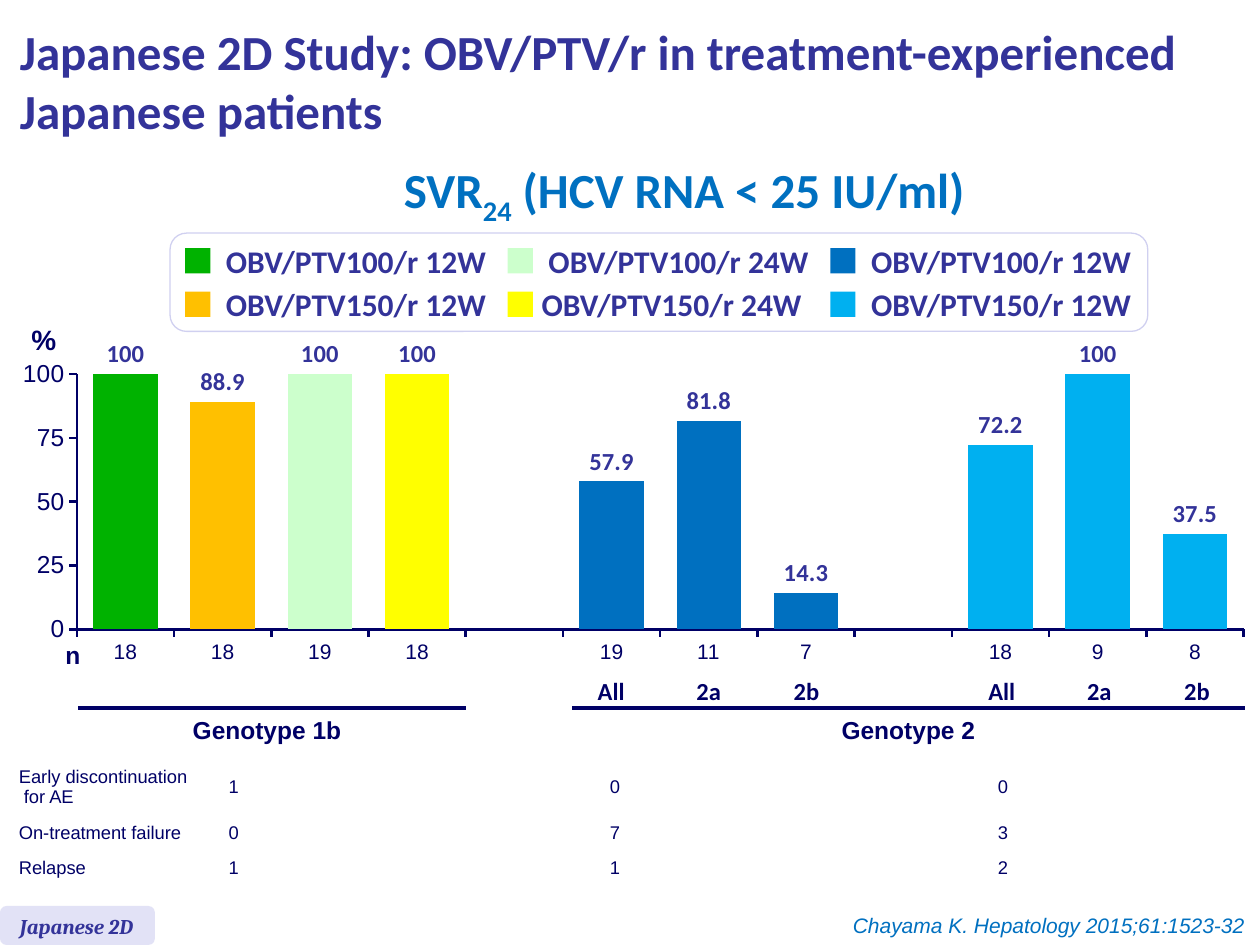
from dataclasses import dataclass
from lxml.etree import SubElement
from pptx import Presentation
from pptx.chart.data import CategoryChartData
from pptx.dml.color import RGBColor
from pptx.enum.chart import XL_CHART_TYPE as ChartType, XL_LABEL_POSITION as LabelPosition
from pptx.enum.chart import XL_TICK_MARK as TickMark
from pptx.enum.shapes import MSO_CONNECTOR as Connector, MSO_SHAPE as Preset
from pptx.enum.text import MSO_ANCHOR as Anchor, PP_ALIGN as Align
from pptx.oxml import parse_xml
from pptx.oxml.ns import nsdecls, qn
from pptx.slide import Slide
from pptx.util import Inches, Pt

WHITE = RGBColor(0xFF, 0xFF, 0xFF)
NAVY = RGBColor(0x00, 0x00, 0x66)
INDIGO = RGBColor(0x33, 0x33, 0x99)
LAVENDER = RGBColor(0xE2, 0xE2, 0xF6)
PALE_VIOLET = RGBColor(0xD0, 0xD0, 0xF0)
GREEN = RGBColor(0x00, 0xB2, 0x00)
MINT = RGBColor(0xCC, 0xFF, 0xCC)
AMBER = RGBColor(0xFF, 0xC0, 0x00)
YELLOW = RGBColor(0xFF, 0xFF, 0x00)
BLUE = RGBColor(0x00, 0x70, 0xC0)
SKY = RGBColor(0x00, 0xB0, 0xF0)

COLUMNS, ROWS = 100, 75
BARS = [
    ("18", 100, GREEN), ("18", 88.9, AMBER), ("19", 100, MINT), ("18", 100, YELLOW),
    ("", None, None),
    ("19", 57.9, BLUE), ("11", 81.8, BLUE), ("7", 14.3, BLUE),
    ("", None, None),
    ("18", 72.2, SKY), ("9", 100, SKY), ("8", 37.5, SKY),
]
# Each entry: colour, wording, distance from swatch to text box
LEGEND = [
    [(GREEN, "OBV/PTV100/r 12W", 2.25), (MINT, "OBV/PTV100/r 24W", 2.25),
     (BLUE, "OBV/PTV100/r 12W", 2.25)],
    [(AMBER, "OBV/PTV150/r 12W", 2.25), (YELLOW, "OBV/PTV150/r 24W", 1.7),
     (SKY, "OBV/PTV150/r 12W", 2.25)],
]
OUTCOMES = [
    ("Early discontinuation\n for AE", "1", "", "0", "", "0", ""),
    ("On-treatment failure", "0", "", "7", "", "3", ""),
    ("Relapse", "1", "", "1", "", "2", ""),
]


def write(paragraph, text, size=14, color=NAVY, font="Arial", bold=False,
          italic=False, baseline=0, align=Align.LEFT, spacing=None):
    """Append text to a paragraph; each newline becomes a line break."""
    paragraph.alignment = align
    if spacing:
        paragraph.line_spacing = spacing
    for index, line in enumerate(text.split("\n")):
        if index:
            paragraph.add_line_break()
        run = paragraph.add_run()
        run.text = line
        style_font(run.font, size, color, font, bold, italic)
        if baseline:
            run.font._element.set("baseline", str(baseline * 1000))


def style_font(target, size, color, name="Arial", bold=False, italic=False):
    target.size, target.name = Pt(size), name
    target.bold, target.italic = bold, italic
    target.color.rgb = color


@dataclass
class GridSlide:
    """Draws on one slide; positions are in columns and rows of its grid."""
    slide: Slide
    unit: int = Inches(0.1)
    line_color: RGBColor = NAVY

    def place(self, *lengths):
        return [round(length * self.unit) for length in lengths]

    def text(self, box, text, wrap=False, anchor=Anchor.TOP, **style):
        shape = self.slide.shapes.add_textbox(*self.place(*box))
        frame = shape.text_frame
        frame.word_wrap, frame.vertical_anchor = wrap, anchor
        write(frame.paragraphs[0], text, **style)
        return shape

    def block(self, box, fill, preset=Preset.RECTANGLE, line=None):
        shape = self.slide.shapes.add_shape(preset, *self.place(*box))
        shape.shadow.inherit = False
        shape.fill.solid()
        shape.fill.fore_color.rgb = fill
        if line:
            shape.line.color.rgb, shape.line.width = line, Pt(0.75)
        else:
            shape.line.fill.background()
        return shape

    def rule(self, left, right, row):
        line = self.slide.shapes.add_connector(
            Connector.STRAIGHT, *self.place(left, row, right, row))
        line.line.color.rgb, line.line.width = self.line_color, Pt(2.25)
        SubElement(line._element.spPr, qn("a:effectLst"))

    def legend(self, entries, left, top, column_step, row_step):
        parts = [self.block((13.5, 18.5, 77.6, 7.8), WHITE,
                            Preset.ROUNDED_RECTANGLE, PALE_VIOLET)]
        for row, line in enumerate(entries):
            for column, (color, label, gap) in enumerate(line):
                x, y = left + column * column_step, top + row * row_step
                parts.append(self.block((x, y, 2, 2), color))
                parts.append(self.text((x + gap, y - 1, 23, 4), label, size=18,
                                       color=INDIGO, font="Calibri", bold=True))
        self.slide.shapes.add_group_shape(parts)

    def bar_chart(self, box, bars):
        data = CategoryChartData()
        data.categories = [patients for patients, _, _ in bars]
        data.add_series("SVR24", [value for _, value, _ in bars])
        chart = self.slide.shapes.add_chart(
            ChartType.COLUMN_CLUSTERED, *self.place(*box), data).chart
        chart.has_legend = chart.has_title = False
        style_font(chart.font, 18, NAVY)
        for axis, size in ((chart.category_axis, 12), (chart.value_axis, 14)):
            axis.has_major_gridlines = False
            axis.major_tick_mark, axis.minor_tick_mark = TickMark.OUTSIDE, TickMark.NONE
            axis.format.line.color.rgb = self.line_color
            axis.format.line.width = Pt(1.5)
            style_font(axis.tick_labels.font, size, NAVY)
        scale = chart.value_axis
        scale.minimum_scale, scale.maximum_scale, scale.major_unit = 0, 100, 25

        plot = chart.plots[0]
        plot.gap_width, plot.vary_by_categories = 51, False
        plot.has_data_labels = True
        labels = plot.data_labels
        labels.show_value, labels.position = True, LabelPosition.OUTSIDE_END
        style_font(labels.font, 14, INDIGO, "Calibri", bold=True)
        for index, (_, value, color) in enumerate(bars):
            if value is not None:
                fill = plot.series[0].points[index].format.fill
                fill.solid()
                fill.fore_color.rgb = color
        self.fix_plot_area(chart, x=0.059, y=0.108, w=0.926, h=0.786)

    @staticmethod
    def fix_plot_area(chart, **shares):
        area = chart._chartSpace.chart.plotArea
        for old in area.findall(qn("c:layout")):
            area.remove(old)
        modes = '<c:xMode val="edge"/><c:yMode val="edge"/>'
        sizes = "".join(f'<c:{key} val="{share}"/>' for key, share in shares.items())
        area.insert(0, parse_xml(
            f'<c:layout {nsdecls("c")}><c:manualLayout><c:layoutTarget val="inner"/>'
            f'{modes}{sizes}</c:manualLayout></c:layout>'))

    def table(self, left, top, widths, heights, rows):
        box = self.place(left, top, sum(widths), sum(heights))
        table = self.slide.shapes.add_table(len(rows), len(widths), *box).table
        table.first_row = table.horz_banding = False
        for column, width in zip(table.columns, self.place(*widths)):
            column.width = width
        for row, height, texts in zip(table.rows, self.place(*heights), rows):
            row.height = height
            for index, (cell, text) in enumerate(zip(row.cells, texts)):
                cell.fill.background()
                cell.vertical_anchor = Anchor.MIDDLE
                paragraph = cell.text_frame.paragraphs[0]
                if text:
                    write(paragraph, text, size=10.5,
                          align=Align.CENTER if index else Align.LEFT)
                else:  # keeps an empty cell from stretching its row
                    SubElement(paragraph._p, qn("a:endParaRPr"), sz="1050")


def main():
    presentation = Presentation()
    presentation.slide_width, presentation.slide_height = Inches(10), Inches(7.5)
    page = GridSlide(presentation.slides.add_slide(presentation.slide_layouts[6]),
                     unit=presentation.slide_width // COLUMNS)

    page.block((0, 71.9, 12.3, 3.1), LAVENDER, Preset.ROUNDED_RECTANGLE)
    page.text((0.6, 72, 11.8, 3), "Japanese 2D", size=12, color=INDIGO,
              font="Cambria", bold=True, italic=True)
    page.text((0.6, 0.3, 98.3, 12.1),
              "Japanese 2D Study: OBV/PTV/r in treatment-experienced Japanese patients",
              wrap=True, anchor=Anchor.MIDDLE, size=28, color=INDIGO,
              font="Calibri", bold=True)
    page.text((61.7, ROWS - 3.1, 38.1, 3), "Chayama K. Hepatology 2015;61:1523-32",
              wrap=True, size=12, color=BLUE, italic=True, align=Align.RIGHT)

    heading = dict(size=28, color=BLUE, font="Calibri", bold=True, align=Align.CENTER)
    subtitle = page.text((10.6, 12.2, 87.4, 5.7), "SVR", wrap=True, **heading)
    paragraph = subtitle.text_frame.paragraphs[0]
    write(paragraph, "24", baseline=-25, **heading)
    write(paragraph, " (HCV RNA < 25 IU/ml)", **heading)

    page.bar_chart((0.2, 26.9, 100, 25.8), BARS)
    page.text((4.2, 50.3, 3.2, 3.4), "n", bold=True)
    page.text((1.5, 25.1, 4, 3.7), "%", size=16, bold=True)
    for start in (46.4, 77.4):
        for index, subtype in enumerate(("All", "2a", "2b")):
            page.text((start + index * 7.75, 53.2, 4.2, 3.4), subtype,
                      font="Calibri", bold=True, align=Align.CENTER)

    page.legend(LEGEND, left=14.7, top=19.7, column_step=25.6, row_step=3.45)

    for left, right, center, name in ((6.2, 37, 21.2, "Genotype 1b"),
                                      (45.4, 98.8, 72.1, "Genotype 2")):
        page.rule(left, right, 56.2)
        page.text((center - 7, 56.5, 14, 3.1), name, bold=True,
                  align=Align.CENTER, spacing=0.9)

    page.table(0.5, 60.2, (16.4, 3.3, 25.5, 6.2, 24.5, 6.4, 15.7),
               (4.5, 2.8, 2.8), OUTCOMES)
    presentation.save("out.pptx")


if __name__ == "__main__":
    main()
